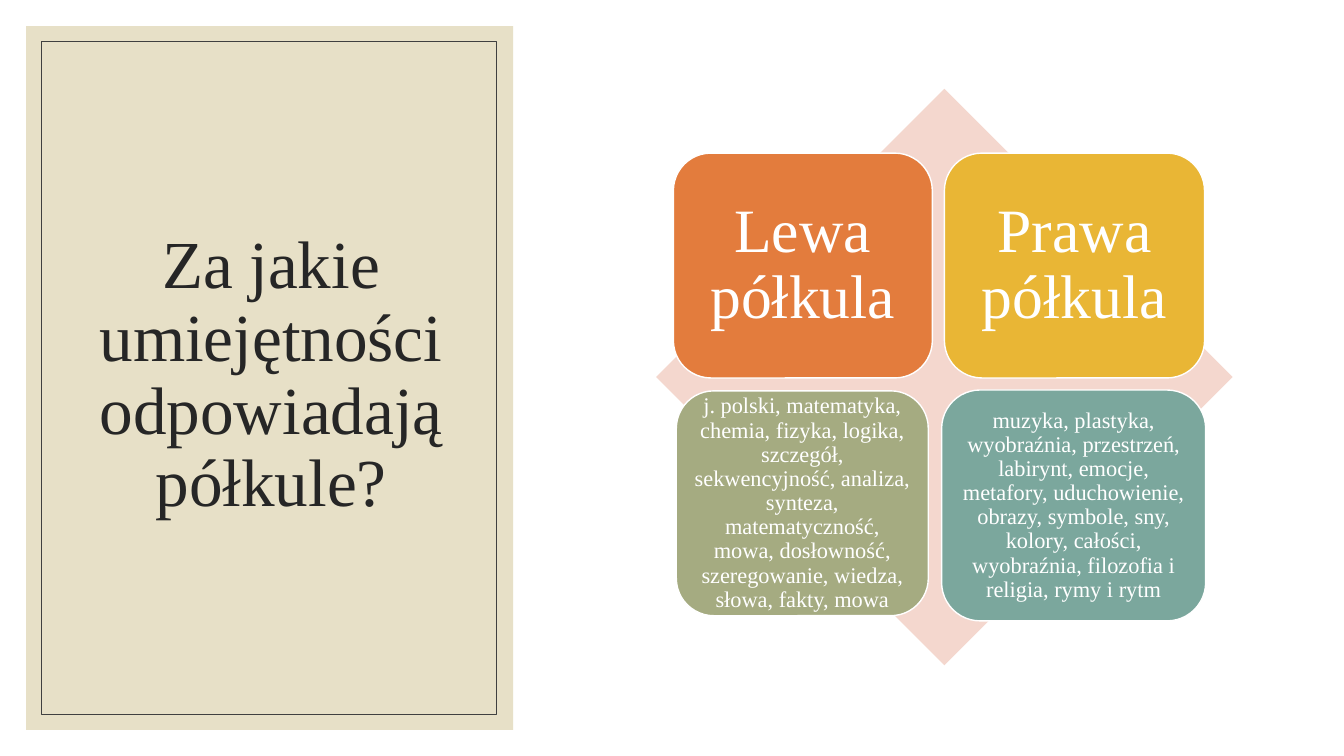
import pptx
import pptx.util
import pptx.dml.color
import pptx.enum.shapes
import pptx.enum.text

Pt = pptx.util.Pt
Kind = pptx.enum.shapes.MSO_SHAPE


def color(code):
    return pptx.dml.color.RGBColor.from_string(code)


class Page:
    """Holds the style and the current slide, and draws each kind of element."""

    font = "Times New Roman"

    def __init__(self, deck):
        self.slide = deck.slides.add_slide(deck.slide_layouts[5])

    def shape(self, kind, box, fill=None, line=None, width=1):
        item = self.slide.shapes.add_shape(kind, *map(Pt, box))
        item.shadow.inherit = False
        if fill:
            item.fill.solid()
            item.fill.fore_color.rgb = color(fill)
        else:
            item.fill.background()
        if line:
            item.line.color.rgb = color(line)
            item.line.width = Pt(width)
        else:
            item.line.fill.background()
        return item

    def label(self, item, text, size, ink, inset):
        frame = item.text_frame
        frame.text = text
        frame.word_wrap = True
        frame.auto_size = pptx.enum.text.MSO_AUTO_SIZE.NONE
        frame.vertical_anchor = pptx.enum.text.MSO_ANCHOR.MIDDLE
        frame.margin_left = frame.margin_right = Pt(inset)
        frame.margin_top = frame.margin_bottom = Pt(inset)
        para = frame.paragraphs[0]
        para.alignment = pptx.enum.text.PP_ALIGN.CENTER
        para.line_spacing = 0.9
        font = para.runs[0].font
        font.name = self.font
        font.size = Pt(size)
        font.color.rgb = color(ink)

    def title(self, box, text):
        item = self.slide.shapes.title
        item.left, item.top, item.width, item.height = map(Pt, box)
        self.label(item, text, 48, "262626", 5)
        item.element.getparent().append(item.element)

    def card(self, box, fill, text, size, inset):
        item = self.shape(Kind.ROUNDED_RECTANGLE, box, fill, "FFFFFF")
        self.label(item, text, size, "FFFFFF", inset)


def main():
    deck = pptx.Presentation()
    deck.slide_width, deck.slide_height = Pt(960), Pt(540)
    page = Page(deck)

    page.shape(Kind.RECTANGLE, (18.7, 18.7, 347.8, 502.6), "E7E0C7")
    page.title((45.4, 43.9, 296.6, 449.3),
               "Za jakie umiejętności odpowiadają półkule?")
    page.shape(Kind.RECTANGLE, (29.5, 29.5, 324.7, 481), None, "404040", 0.5)
    page.shape(Kind.DIAMOND, (468.7, 63.4, 411.8, 411.8), "F4D7CE")

    heads = [
        ((481, 109.4, 185, 160.6), "E37C3D", "Lewa półkula"),
        ((674.6, 109.4, 185.8, 160.6), "E9B635", "Prawa półkula"),
    ]
    skills = [
        ((483.1, 279.2, 180, 160.6), "A5AB81",
         "j. polski, matematyka, chemia, fizyka, logika, szczegół, "
         "sekwencyjność, analiza, synteza, matematyczność, mowa, "
         "dosłowność, szeregowanie, wiedza, słowa, fakty, mowa"),
        ((672.6, 278.6, 188.6, 164.9), "7BA79D",
         "muzyka, plastyka, wyobraźnia, przestrzeń, labirynt, emocje, "
         "metafory, uduchowienie, obrazy, symbole, sny, kolory, całości, "
         "wyobraźnia, filozofia i religia, rymy i rytm"),
    ]
    for cards, size, inset in ((heads, 44, 13), (skills, 16, 5)):
        for box, fill, text in cards:
            page.card(box, fill, text, size, inset)

    deck.save("out.pptx")


if __name__ == "__main__":
    main()
